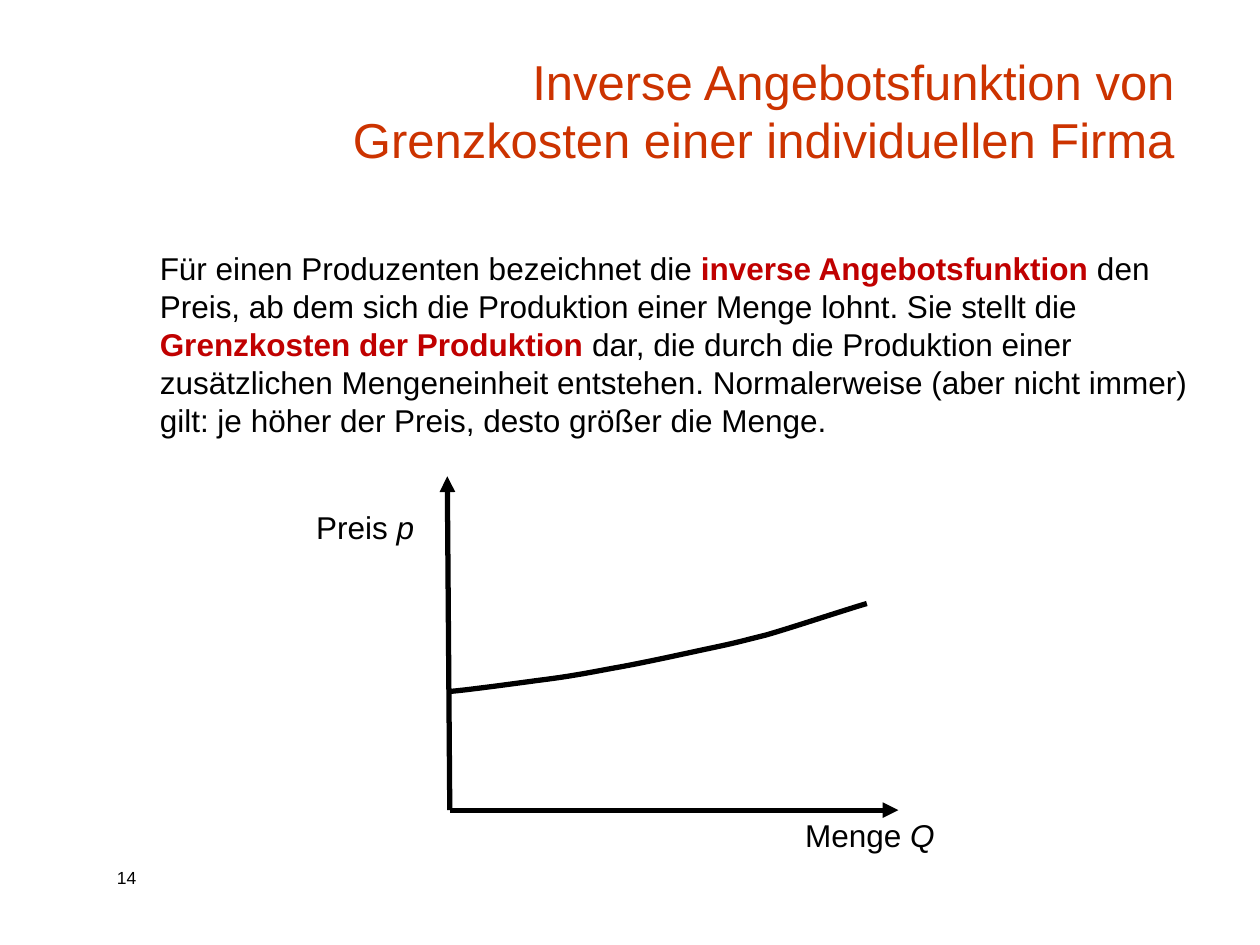
from typing import NamedTuple

from lxml import etree
from pptx import Presentation
from pptx.dml.color import RGBColor
from pptx.enum.shapes import MSO_CONNECTOR
from pptx.enum.text import MSO_ANCHOR, MSO_AUTO_SIZE, PP_ALIGN
from pptx.oxml.ns import qn
from pptx.slide import Slide
from pptx.util import Inches, Pt

STRAIGHT = MSO_CONNECTOR.STRAIGHT
BOTTOM = MSO_ANCHOR.BOTTOM
RIGHT = PP_ALIGN.RIGHT
NO_AUTOFIT = MSO_AUTO_SIZE.NONE

BLACK = RGBColor(0x00, 0x00, 0x00)
TITLE_RED = RGBColor(0xCC, 0x33, 0x00)
TERM_RED = RGBColor(0xC0, 0x00, 0x00)
FONT = "Arial"
LINE_WIDTH = Pt(3)
TITLE_ONLY = 5
CURVE_STEPS = 8

Point = tuple[float, float]


class Run(NamedTuple):
    text: str
    term: bool = False
    italic: bool = False


class Label(NamedTuple):
    left: float
    top: float
    width: float
    height: float
    runs: list[Run]
    size: int = 18
    inset: bool = False


class Axis(NamedTuple):
    start: Point
    end: Point


LABELS = [
    Label(0.83, 6.83, 0.67, 0.27, [Run("14")], size=10, inset=True),
    Label(2.51, 4.03, 1.3, 0.3, [Run("Preis"), Run(" p", italic=True)]),
    Label(6.39, 6.48, 1.11, 0.35, [Run("Menge"), Run(" Q", italic=True)]),
    Label(1.17, 1.93, 8.53, 1.62, [
        Run("Für einen Produzenten bezeichnet die "),
        Run("inverse Angebotsfunktion ", term=True),
        Run("den Preis, ab dem sich die Produktion einer Menge lohnt. "
            "Sie stellt die "),
        Run("Grenzkosten der Produktion ", term=True),
        Run("dar, die durch die Produktion einer zusätzlichen Mengeneinheit "
            "entstehen. Normalerweise (aber nicht immer) gilt: je höher der "
            "Preis, desto größer die Menge."),
    ], inset=True),
]

ORIGIN = (3.57, 6.43)
AXES = [Axis(ORIGIN, (7.13, 6.43)), Axis(ORIGIN, (3.55, 3.78))]

SUPPLY_START = (3.55, 5.49)
SUPPLY_CURVE = [
    ((3.69, 5.48), (4.12, 5.42), (4.35, 5.39)),
    ((4.58, 5.36), (4.72, 5.33), (4.94, 5.29)),
    ((5.16, 5.25), (5.47, 5.18), (5.66, 5.14)),
    ((5.85, 5.10), (5.88, 5.09), (6.08, 5.04)),
    ((6.29, 4.98), (6.71, 4.84), (6.88, 4.79)),
]


def set_title(slide: Slide, text: str) -> None:
    title = slide.shapes.title
    title.left, title.top = Inches(2.09), Inches(0.42)
    title.width, title.height = Inches(7.33), Inches(0.97)
    frame = title.text_frame
    frame.text = text
    frame.auto_size = NO_AUTOFIT
    frame.vertical_anchor = BOTTOM
    paragraph = frame.paragraphs[0]
    paragraph.alignment = RIGHT
    paragraph.font.name = FONT
    paragraph.font.size = Pt(28)
    paragraph.font.color.rgb = TITLE_RED


def add_label(slide: Slide, label: Label) -> None:
    box = slide.shapes.add_textbox(Inches(label.left), Inches(label.top),
                                   Inches(label.width), Inches(label.height))
    frame = box.text_frame
    frame.word_wrap = True
    if not label.inset:
        frame.margin_left = frame.margin_right = 0
        frame.margin_top = frame.margin_bottom = 0
    paragraph = frame.paragraphs[0]
    paragraph.font.name = FONT
    paragraph.font.size = Pt(label.size)
    paragraph.font.color.rgb = BLACK
    for part in label.runs:
        run = paragraph.add_run()
        run.text = part.text
        if part.italic:
            run.font.italic = True
        if part.term:
            run.font.bold = True
            run.font.color.rgb = TERM_RED


def add_axis(slide: Slide, axis: Axis) -> None:
    connector = slide.shapes.add_connector(
        STRAIGHT, *map(Inches, axis.start), *map(Inches, axis.end))
    connector.line.color.rgb = BLACK
    connector.line.width = LINE_WIDTH
    line = connector.line._get_or_add_ln()
    etree.SubElement(line, qn("a:tailEnd"), type="triangle")
    etree.SubElement(connector._element.spPr, qn("a:effectLst"))


def bezier_point(points: tuple[Point, ...], t: float) -> Point:
    weights = ((1 - t) ** 3, 3 * t * (1 - t) ** 2, 3 * t ** 2 * (1 - t), t ** 3)
    x, y = (sum(w * p[i] for w, p in zip(weights, points)) for i in (0, 1))
    return x, y


def add_supply_curve(slide: Slide) -> None:
    vertices = []
    start = SUPPLY_START
    for segment in SUPPLY_CURVE:
        vertices += [bezier_point((start, *segment), step / CURVE_STEPS)
                     for step in range(1, CURVE_STEPS + 1)]
        start = segment[-1]
    builder = slide.shapes.build_freeform(*map(Inches, SUPPLY_START))
    builder.add_line_segments([(Inches(x), Inches(y)) for x, y in vertices],
                              close=False)
    curve = builder.convert_to_shape()
    curve.shadow.inherit = False
    curve.fill.background()
    curve.line.color.rgb = BLACK
    curve.line.width = LINE_WIDTH


def main() -> None:
    presentation = Presentation()
    presentation.slide_width = Inches(10)
    presentation.slide_height = Inches(7.5)
    slide = presentation.slides.add_slide(presentation.slide_layouts[TITLE_ONLY])
    set_title(slide, "Inverse Angebotsfunktion von Grenzkosten "
                     "einer individuellen Firma")
    for label in LABELS:
        add_label(slide, label)
    for axis in AXES:
        add_axis(slide, axis)
    add_supply_curve(slide)
    presentation.save("out.pptx")


if __name__ == "__main__":
    main()
